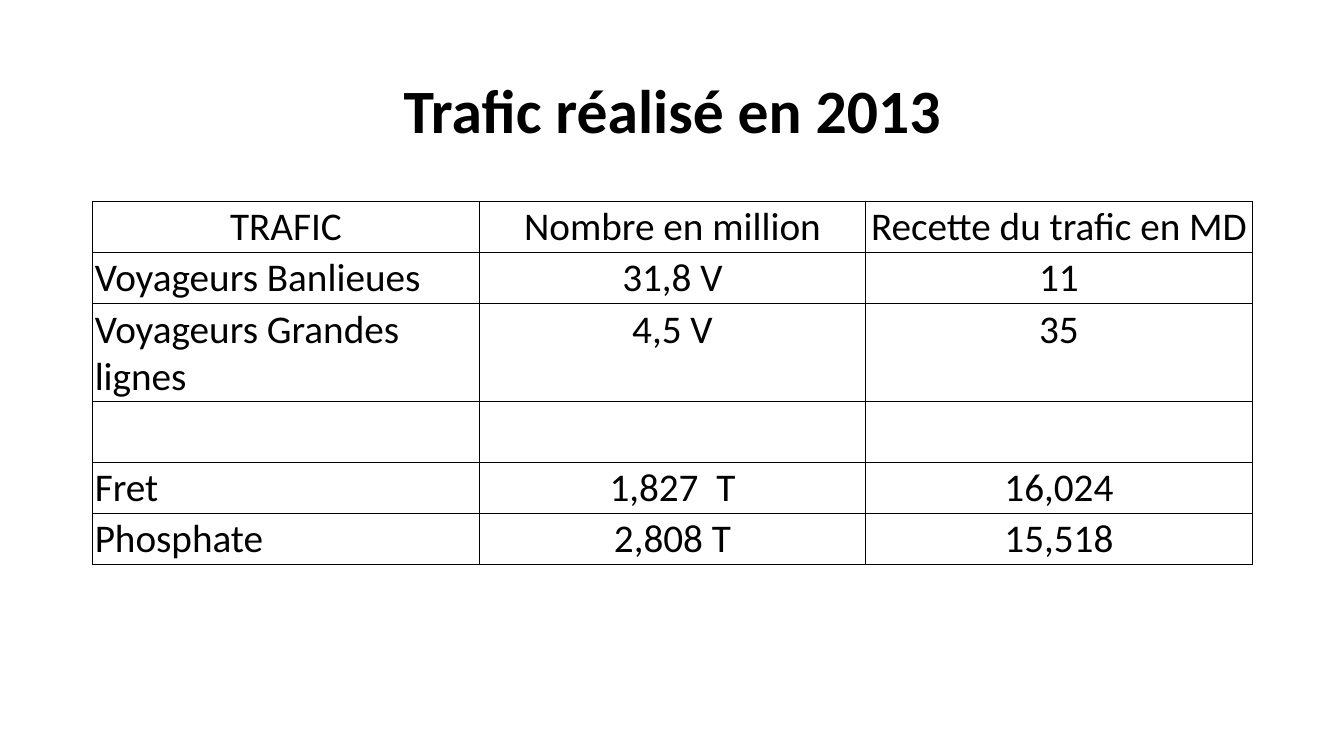
from lxml import etree
from pptx import Presentation
from pptx.dml.color import RGBColor
from pptx.enum.text import MSO_ANCHOR, PP_ALIGN
from pptx.oxml.ns import qn
from pptx.util import Inches, Pt

LEFT, CENTER = PP_ALIGN.LEFT, PP_ALIGN.CENTER
MIDDLE, TOP = MSO_ANCHOR.MIDDLE, MSO_ANCHOR.TOP
WIDE, HIGH = Inches(13.33), Inches(7.5)
FONT = "Calibri"
COLORS = {"ink": "000000", "paper": "FFFFFF"}
ROWS = [
    ("TRAFIC", "Nombre en million", "Recette du trafic en MD"),
    ("Voyageurs Banlieues", "31,8 V", "11"),
    ("Voyageurs Grandes lignes", "4,5 V", "35"),
    ("", "", ""),
    ("Fret", "1,827  T", "16,024"),
    ("Phosphate", "2,808 T", "15,518"),
]


def write(par, text, size, align, bold=False):
    par.text = text
    par.alignment = align
    font = par.font
    font.name, font.size, font.bold = FONT, Pt(size), bold
    font.color.rgb = RGBColor.from_string(COLORS["ink"])


def border(cell):
    props = cell._tc.get_or_add_tcPr()
    for spot, side in enumerate(("lnL", "lnR", "lnT", "lnB")):
        line = etree.Element(qn(f"a:{side}"), w=str(Pt(1)))
        fill = etree.SubElement(line, qn("a:solidFill"))
        etree.SubElement(fill, qn("a:srgbClr"), val=COLORS["ink"])
        props.insert(spot, line)


def add_title(slide, box):
    frame = slide.shapes.add_textbox(*box).text_frame
    frame.word_wrap = True
    frame.vertical_anchor = MIDDLE
    par = frame.paragraphs[0]
    write(par, "Trafic réalisé en 2013", 44, CENTER, True)
    par.line_spacing = 0.9


def add_grid(slide, box):
    table = slide.shapes.add_table(len(ROWS), len(ROWS[0]), *box).table
    for col in table.columns:
        col.width = box[2] // len(ROWS[0])
    for r, texts in enumerate(ROWS):
        table.rows[r].height = Inches(0.41 if any(texts) else 0.6)
        for c, text in enumerate(texts):
            cell = table.cell(r, c)
            cell.margin_left = cell.margin_right = Inches(0.02)
            cell.margin_top = cell.margin_bottom = Inches(0.02)
            cell.vertical_anchor = TOP
            cell.fill.solid()
            cell.fill.fore_color.rgb = RGBColor.from_string(COLORS["paper"])
            write(cell.text_frame.paragraphs[0], text, 28,
                  LEFT if r and not c else CENTER)
            border(cell)


def main():
    deck = Presentation()
    deck.slide_width, deck.slide_height = WIDE, HIGH
    slide = deck.slides.add_slide(deck.slide_layouts[6])
    left, width = Inches(0.92), Inches(11.5)
    add_title(slide, (left, Inches(0.4), width, Inches(1.45)))
    add_grid(slide, (left, Inches(2), width, Inches(3.52)))
    deck.save("out.pptx")


if __name__ == "__main__":
    main()
